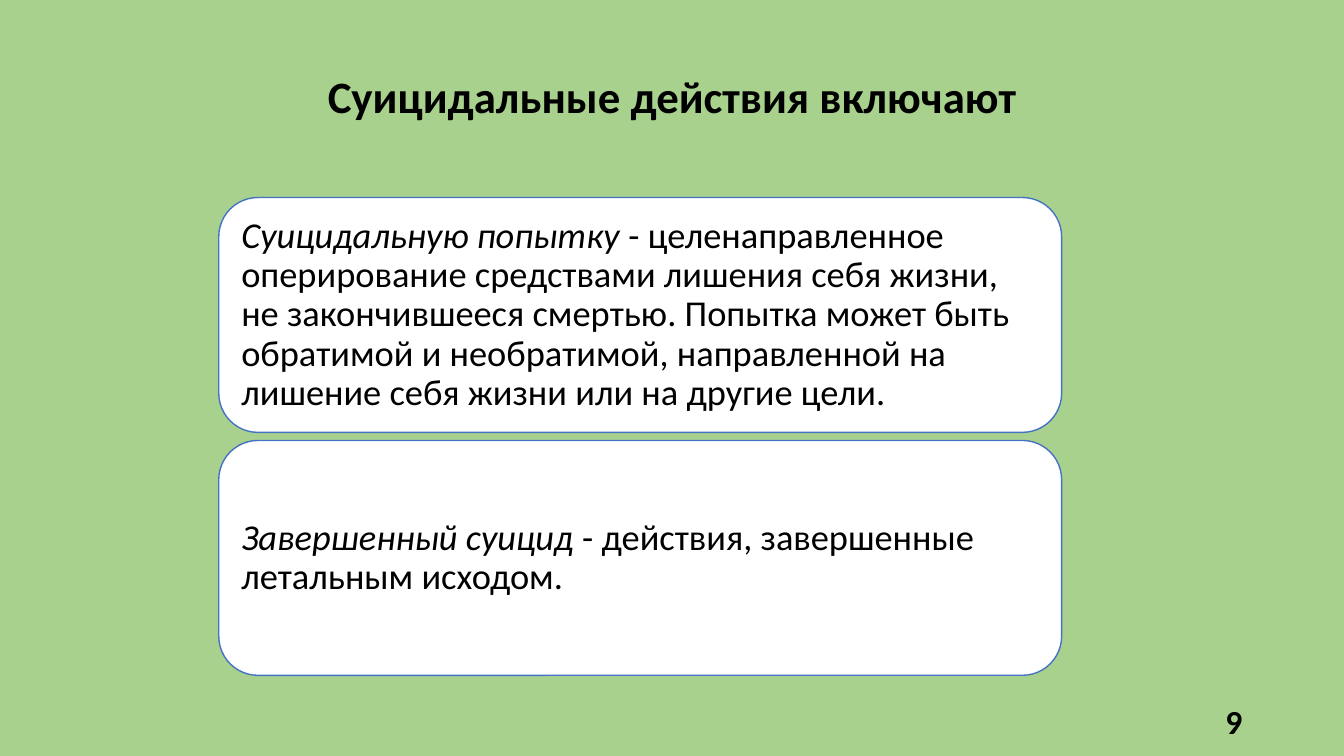
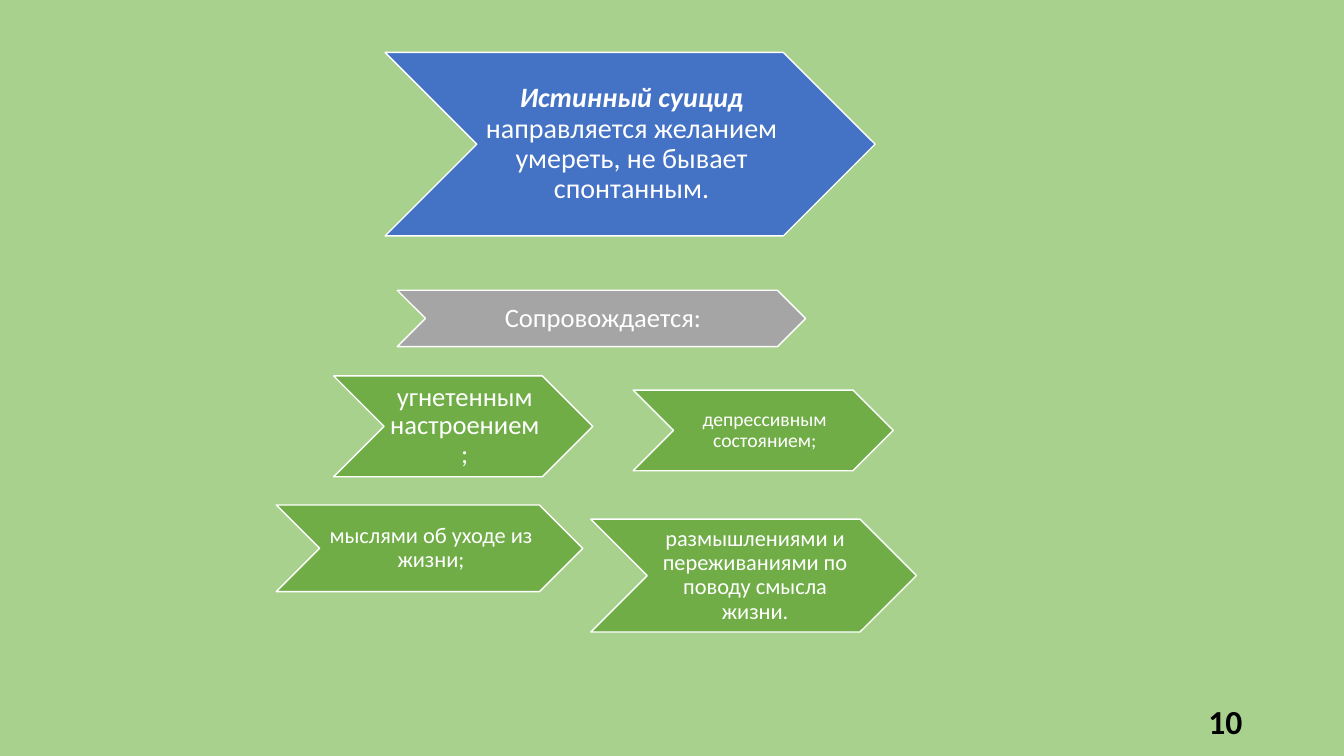
from dataclasses import dataclass

from pptx import Presentation
from pptx.dml.color import RGBColor
from pptx.enum.shapes import MSO_SHAPE
from pptx.enum.text import MSO_ANCHOR, PP_ALIGN
from pptx.util import Inches, Pt


@dataclass(frozen=True)
class Theme:
    font: str = "Calibri"
    background: str = "A9D18E"
    ink: str = "000000"
    white: str = "FFFFFF"
    blue: str = "4472C4"
    gray: str = "A5A5A5"
    green: str = "70AD47"
    title_size: int = 32
    card_size: int = 26
    number_size: int = 24
    lead_size: int = 20
    label_size: int = 19
    note_size: int = 16
    small_size: int = 14
    outline: int = 1
    spacing: float = 0.9


def add_run(p, text, *, font, size, color, bold=False, italic=False):
    r = p.add_run()
    r.text = text
    r.font.name = font
    r.font.size = Pt(size)
    r.font.color.rgb = RGBColor.from_string(color)
    r.font.bold = bold
    r.font.italic = italic
    return r


class Deck:
    def __init__(self, theme):
        self.theme = theme
        self.prs = Presentation()
        self.prs.slide_width = Inches(13.33)
        self.prs.slide_height = Inches(7.5)
        fill = self.prs.slide_master.background.fill
        fill.solid()
        fill.fore_color.rgb = RGBColor.from_string(theme.background)
        self.s = None

    def slide(self, number):
        self.s = self.prs.slides.add_slide(self.prs.slide_layouts[6])
        self.textbox((9.42, 6.95, 3, 0.4), str(number), PP_ALIGN.RIGHT,
                     self.theme.number_size)

    def paragraph(self, sp, align, insets=(0.1, 0.05, 0.1, 0.05), spacing=None):
        tf = sp.text_frame
        tf.word_wrap = True
        tf.vertical_anchor = MSO_ANCHOR.MIDDLE
        (tf.margin_left, tf.margin_top,
         tf.margin_right, tf.margin_bottom) = map(Inches, insets)
        p = tf.paragraphs[0]
        p.alignment = align
        p.line_spacing = spacing
        return p

    def textbox(self, box, text, align, size, spacing=None):
        sp = self.s.shapes.add_textbox(*map(Inches, box))
        p = self.paragraph(sp, align, spacing=spacing)
        add_run(p, text, font=self.theme.font, size=size,
                color=self.theme.ink, bold=True)

    def title(self, text):
        self.textbox((0.92, 0.4, 11.5, 1.16), text, PP_ALIGN.CENTER,
                     self.theme.title_size, self.theme.spacing)

    def shape(self, kind, box, fill, line):
        sp = self.s.shapes.add_shape(kind, *map(Inches, box))
        sp.shadow.inherit = False
        sp.fill.solid()
        sp.fill.fore_color.rgb = RGBColor.from_string(fill)
        sp.line.color.rgb = RGBColor.from_string(line)
        sp.line.width = Pt(self.theme.outline)
        return sp

    def card(self, box, term, text):
        t = self.theme
        sp = self.shape(MSO_SHAPE.ROUNDED_RECTANGLE, box, t.white, t.blue)
        p = self.paragraph(sp, PP_ALIGN.LEFT, (0.11,) * 4, t.spacing)
        style = dict(font=t.font, size=t.card_size, color=t.ink)
        add_run(p, term, italic=True, **style)
        add_run(p, text, **style)

    def chevron(self, box, fill, size, text, lead=None):
        t = self.theme
        sp = self.shape(MSO_SHAPE.CHEVRON, box, fill, t.white)
        p = self.paragraph(sp, PP_ALIGN.CENTER, (0.03, 0.01, 0, 0.01), t.spacing)
        style = dict(font=t.font, size=size, color=t.white)
        if lead:
            add_run(p, lead, bold=True, italic=True, **style)
        add_run(p, text, **style)


def build_actions(deck):
    deck.slide(9)
    deck.title("Суицидальные действия включают")
    cards = [
        ("Суицидальную попытку ",
         "- целенаправленное оперирование средствами лишения себя жизни, "
         "не закончившееся смертью. Попытка может быть обратимой и "
         "необратимой, направленной на лишение себя жизни или на другие цели."),
        ("Завершенный суицид ", "- действия, завершенные летальным исходом."),
    ]
    top, height, gap = 1.96, 2.33, 0.08
    for i, (term, text) in enumerate(cards):
        deck.card((2.17, top + i * (height + gap), 8.36, height), term, text)


def build_signs(deck):
    t = deck.theme
    deck.slide(10)
    deck.chevron((3.82, 0.52, 4.86, 1.82), t.blue, t.lead_size,
                 "направляется желанием умереть, не бывает спонтанным.",
                 lead="Истинный суицид ")
    deck.chevron((3.94, 2.88, 4.05, 0.56), t.gray, t.label_size, "Сопровождается:")
    signs = [
        ((3.31, 3.73, 2.57, 1), t.label_size, "угнетенным настроением;"),
        ((6.28, 3.87, 2.58, 0.8), t.small_size, "депрессивным состоянием;"),
        ((2.74, 5.01, 3.04, 0.86), t.note_size, "мыслями об уходе из жизни;"),
        ((5.86, 5.15, 3.23, 1.12), t.note_size,
         "размышлениями и переживаниями по поводу смысла жизни."),
    ]
    for box, size, text in signs:
        deck.chevron(box, t.green, size, text)


def main():
    deck = Deck(Theme())
    build_actions(deck)
    build_signs(deck)
    deck.prs.save("out.pptx")


if __name__ == "__main__":
    main()
